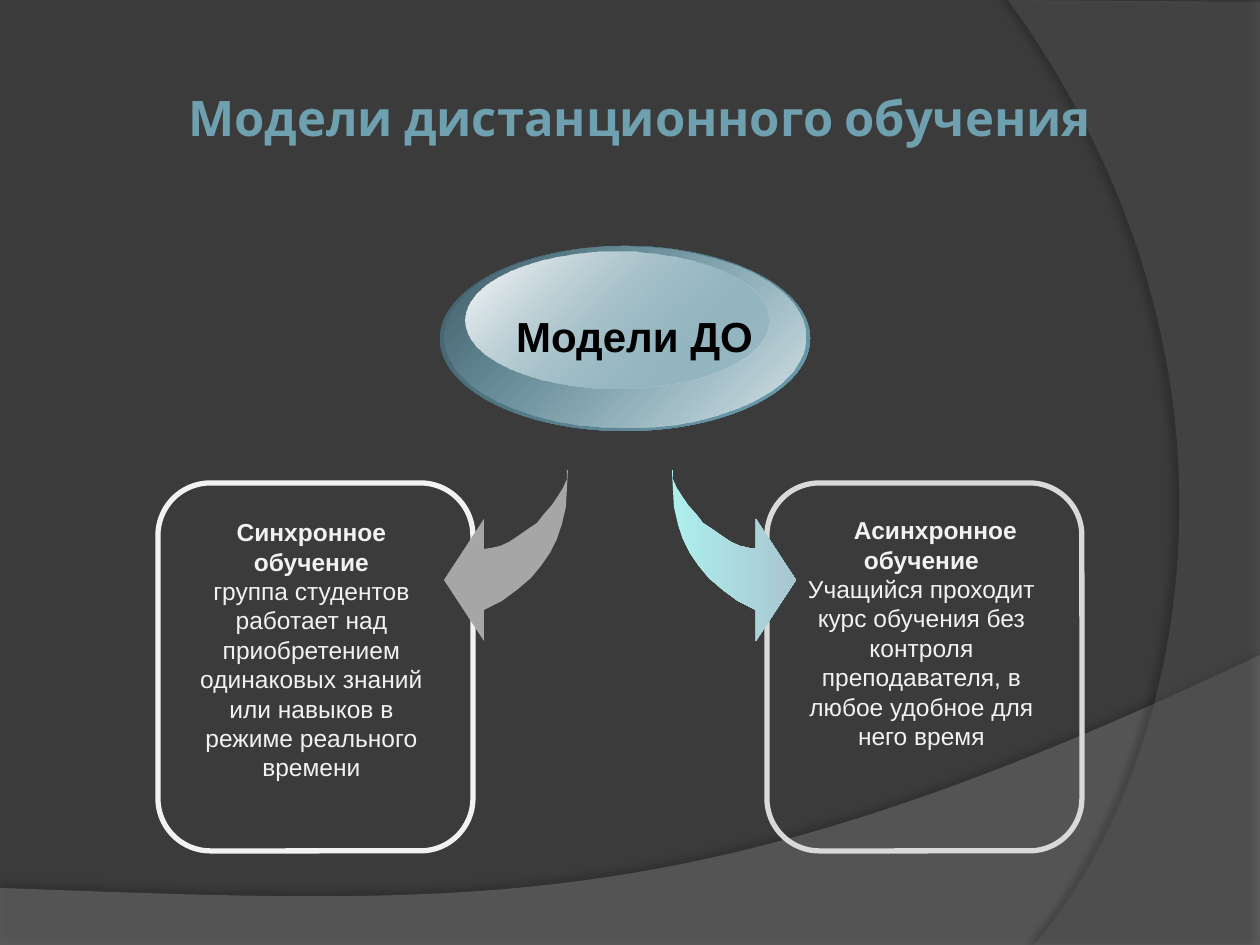
from lxml.etree import SubElement
from pptx import Presentation
from pptx.dml.color import RGBColor
from pptx.enum.shapes import MSO_SHAPE
from pptx.enum.text import MSO_ANCHOR, PP_ALIGN
from pptx.oxml.ns import qn
from pptx.util import Pt

PX = 7257  # EMU per px, 126 px to the inch
COLORS = {
    "background": "3B3B3B", "wave": "7F7F7F", "arc": "5E5E5E", "shadow": "000000",
    "title": "6EA0B0", "label": "000000", "text": "F2F2F2",
    "sync": "F2F2F2", "async": "D9D9D9", "sync_arrow": "A6A6A6",
    "arrow_tail": "AEEFEE", "arrow_tip": "A8C6D0",
    "deep": "3F5C66", "teal": "6EA0B0", "pale": "DBE4E7", "white": "FFFFFF",
}
RGB = {name: RGBColor.from_string(value) for name, value in COLORS.items()}


def add_outline(points):
    """Draw a closed outline through points in px."""
    corners = [(x * PX, y * PX) for x, y in points]
    builder = shapes.build_freeform(*corners[0])
    builder.add_line_segments(corners[1:])
    return builder.convert_to_shape()


def write(frame, paragraphs, size, color, font="Arial", bold_count=1,
          wrap=True, anchor=MSO_ANCHOR.TOP, stagger=0):
    """Write centred paragraphs; stagger shifts the lines of the first one, in px."""
    frame.word_wrap = wrap
    frame.vertical_anchor = anchor
    for index, text in enumerate(paragraphs):
        paragraph = frame.paragraphs[0] if index == 0 else frame.add_paragraph()
        paragraph.text = text
        paragraph.alignment = PP_ALIGN.CENTER
        if stagger and index == 0:
            properties = paragraph._p.get_or_add_pPr()
            properties.set("marR", str(2 * stagger * PX))
            properties.set("indent", str(4 * stagger * PX))
        paragraph.font.name = font
        paragraph.font.size = Pt(size)
        paragraph.font.bold = index < bold_count
        paragraph.font.color.rgb = RGB[color]


presentation = Presentation()
presentation.slide_width = 1260 * PX
presentation.slide_height = 945 * PX
slide = presentation.slides.add_slide(presentation.slide_layouts[5])
shapes = slide.shapes
slide.background.fill.solid()
slide.background.fill.fore_color.rgb = RGB["background"]

# Backdrop: translucent wave and arc; the last side of each is bent into a curve
backdrop = [
    ([(0, 888), (0, 946), (1260, 946), (1260, 655), (0, 888)],
     [(704, 919), (493, 906), (0, 888)], "wave", 45, 35, 3.5, 270),
    ([(1260, 2), (1260, 945), (1034, 945), (1008, 0), (1260, 2)],
     [(1178, 780), (1283, 378), (1008, 0)], "arc", 40, 45, 4, 180),
]
for corners, curve, color, opacity, shade, distance, direction in backdrop:
    panel = add_outline(corners)
    bent_side = list(panel._element.iter(qn("a:lnTo")))[corners.index(curve[-1], 1) - 1]
    bent_side.tag = qn("a:cubicBezTo")
    bent_side.remove(bent_side[0])
    for x, y in curve:
        SubElement(bent_side, qn("a:pt"), x=str(x * PX - panel.left),
                   y=str(y * PX - panel.top))
    panel.shadow.inherit = False
    panel.line.fill.background()
    panel.fill.solid()
    panel.fill.fore_color.rgb = RGB[color]
    fill_color = panel._element.spPr.find(f"{qn('a:solidFill')}/{qn('a:srgbClr')}")
    SubElement(fill_color, qn("a:alpha"), val=str(opacity * 1000))
    shadow = SubElement(
        panel._element.spPr.find(qn("a:effectLst")), qn("a:outerShdw"),
        blurRad=str(Pt(4)), dist=str(Pt(distance)), dir=str(direction * 60000),
        algn="ctr", rotWithShape="0")
    shadow_color = SubElement(shadow, qn("a:srgbClr"), val=COLORS["shadow"])
    SubElement(shadow_color, qn("a:alpha"), val=str(shade * 1000))

# Title, brought in front of the backdrop
title = shapes.title
title.left, title.top, title.width, title.height = 63 * PX, 38 * PX, 1153 * PX, 158 * PX
write(title.text_frame, ["Модели дистанционного обучения"], 28, "title",
      font="Cabin", anchor=MSO_ANCHOR.MIDDLE)
shapes._spTree.append(title._element)

# Frames of the two models
for left, color in [(767, "async"), (158, "sync")]:
    model_frame = shapes.add_shape(MSO_SHAPE.ROUNDED_RECTANGLE, left * PX,
                                   483 * PX, 315 * PX, 368 * PX)
    model_frame.shadow.inherit = False
    model_frame.fill.background()
    model_frame.line.color.rgb = RGB[color]
    model_frame.line.width = Pt(3)

# Curved arrows, mirror images of each other
gradients = []
arrow_outline = [
    (0, 0), (1, 19), (2, 37), (6, 54), (11, 69), (18, 83), (27, 96), (37, 108),
    (51, 120), (66, 131), (84, 140), (84, 171), (124, 110), (84, 49), (84, 79),
    (77, 78), (68, 76), (59, 72), (50, 66), (40, 59), (31, 53), (24, 44),
    (16, 35), (10, 26), (5, 18), (1, 9), (1, 0),
]
for tail_x, side, stops in [
    (568, -1, [("sync_arrow", 100), ("sync_arrow", 100)]),
    (672, 1, [("arrow_tail", 100), ("arrow_tip", 100)]),
]:
    arrow = add_outline([(tail_x + side * x, 470 + y) for x, y in arrow_outline])
    gradients.append((arrow, 0, stops))

# Glossy oval: rim, body and highlight
oval = shapes.add_group_shape()
for left, top, width, height, stops in [
    (440, 246, 370, 185, [("deep", 100), ("teal", 100)]),
    (445, 247, 360, 180, [("teal", 0), ("pale", 100)]),
    (466, 252, 303, 137, [("white", 100), ("teal", 38)]),
]:
    layer = oval.shapes.add_shape(MSO_SHAPE.OVAL, left * PX, top * PX,
                                  width * PX, height * PX)
    gradients.append((layer, 45, stops))

# Gradient fills of the arrows and the oval
for shape, angle, stops in gradients:
    shape.shadow.inherit = False
    shape.line.fill.background()
    shape.fill.gradient()
    shape.fill.gradient_angle = -angle % 360
    for position, (stop, (color, opacity)) in enumerate(zip(shape.fill.gradient_stops, stops)):
        stop.position = position
        stop.color.rgb = RGB[color]
    stop_colors = list(shape._element.spPr.iter(qn("a:srgbClr")))
    for stop_color, (color, opacity) in zip(stop_colors, stops):
        if opacity < 100:
            SubElement(stop_color, qn("a:alpha"), val=str(opacity * 1000))

# Texts of the oval and of the two models
for left, top, width, height, paragraphs, size, color, wrap, stagger in [
    (502, 304, 265, 63, ["Модели ДО"], 24, "label", False, 0),
    (171, 511, 281, 280,
     ["Синхронное обучение",
      "группа студентов работает над приобретением одинаковых знаний "
      "или навыков в режиме реального времени"], 14, "text", True, 0),
    (788, 509, 281, 280,
     ["Асинхронное обучение",
      "Учащийся проходит курс обучения без контроля преподавателя, "
      "в любое удобное для него время"], 14, "text", True, 7),
]:
    caption = shapes.add_textbox(left * PX, top * PX, width * PX, height * PX)
    write(caption.text_frame, paragraphs, size, color, wrap=wrap, stagger=stagger)

presentation.save("out.pptx")
